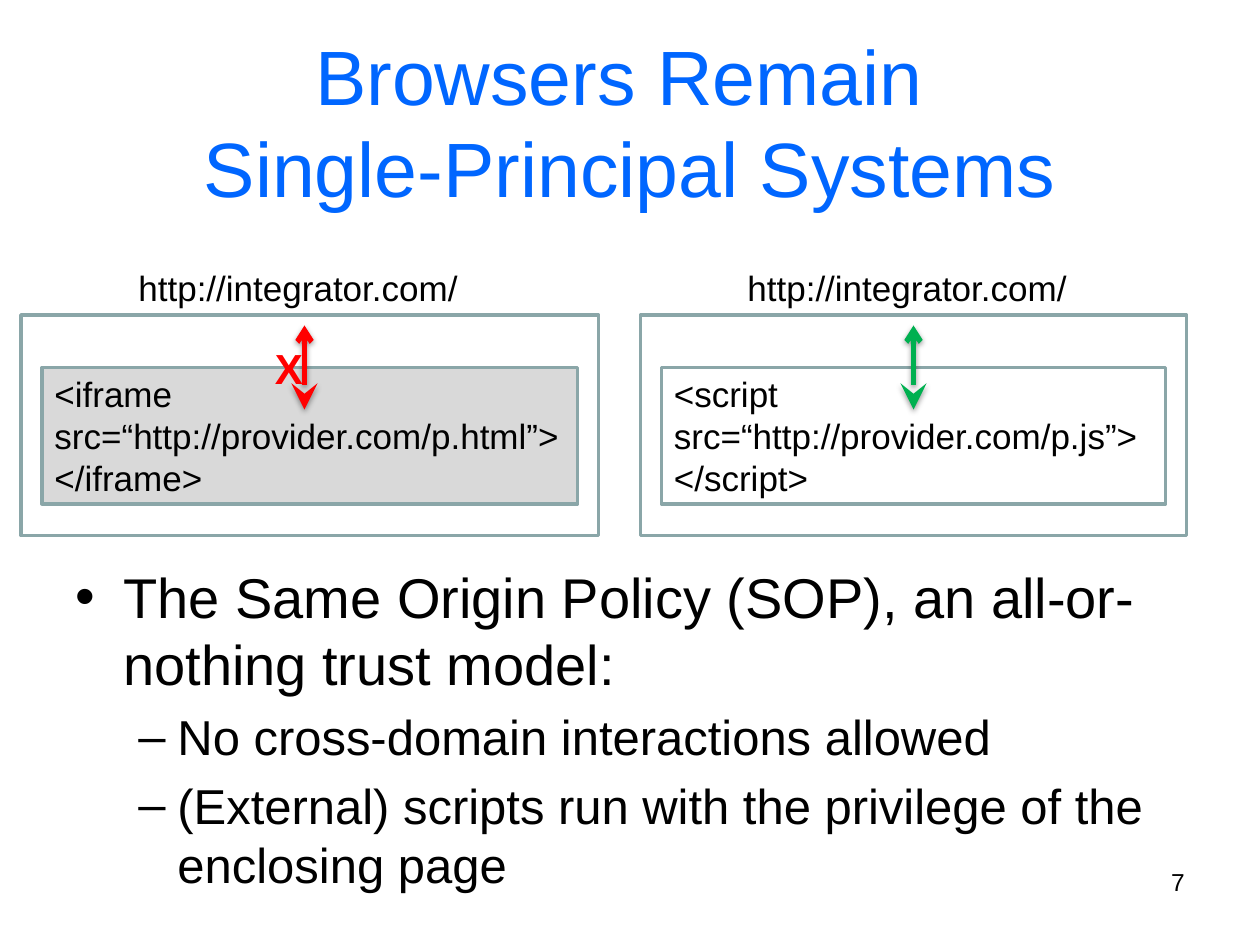
from dataclasses import dataclass

from lxml.etree import SubElement
from pptx import Presentation
from pptx.dml.color import RGBColor
from pptx.enum.shapes import MSO_CONNECTOR, MSO_SHAPE
from pptx.enum.text import MSO_ANCHOR, MSO_AUTO_SIZE, PP_ALIGN
from pptx.oxml.ns import qn
from pptx.util import Inches, Pt


@dataclass(frozen=True)
class Theme:
    font: str = "Arial"
    title_color: str = "0066FF"
    ink: str = "000000"
    frame: str = "8AA6A8"
    grey: str = "D9D9D9"
    white: str = "FFFFFF"
    denied: str = "FF0000"
    allowed: str = "00B050"
    title_size: int = 44
    bullet_size: int = 32
    dash_size: int = 28
    mark_size: int = 24
    code_size: int = 20
    number_size: int = 14
    frame_width: int = 2
    arrow_width: int = 3


def write(frame, text, *, font, size, color, bold=False, align=PP_ALIGN.LEFT):
    """Fill a text frame, one paragraph for each line of text."""
    frame.text = text
    for para in frame.paragraphs:
        para.alignment = align
        style_font(para.font, font, size, color, bold)
        for span in para.runs:
            style_font(span.font, font, size, color, bold)


def style_font(target, name, size, color, bold):
    target.name, target.size, target.bold = name, Pt(size), bold
    target.color.rgb = RGBColor.from_string(color)


def add_bullet(para, mark, margin, hanging):
    properties = para._p.get_or_add_pPr()
    properties.set("marL", str(Inches(margin)))
    properties.set("indent", str(-Inches(hanging)))
    SubElement(properties, qn("a:buFont"), typeface="Arial")
    SubElement(properties, qn("a:buChar"), char=mark)


def add_soft_shadow(connector):
    effects = SubElement(connector._element.spPr, qn("a:effectLst"))
    shadow = SubElement(effects, qn("a:outerShdw"), blurRad=str(Pt(3.1)),
                        dist=str(Pt(1.6)), dir="5400000", rotWithShape="0")
    color = SubElement(shadow, qn("a:srgbClr"), val="000000")
    SubElement(color, qn("a:alpha"), val="38000")


class SlideBuilder:
    """Places elements on a grid of 120 columns by 90 rows."""

    def __init__(self, deck, theme):
        self.theme = theme
        self.column = deck.slide_width / 120
        self.row = deck.slide_height / 90
        self.page = deck.slides.add_slide(deck.slide_layouts[5])

    def place(self, left, top, width, height):
        return (round(left * self.column), round(top * self.row),
                round(width * self.column), round(height * self.row))

    def title(self, text, *area):
        box = self.page.shapes.title
        box.left, box.top, box.width, box.height = self.place(*area)
        box.text_frame.vertical_anchor = MSO_ANCHOR.MIDDLE
        write(box.text_frame, text, font=self.theme.font, size=self.theme.title_size,
              color=self.theme.title_color, align=PP_ALIGN.CENTER)

    def text(self, text, *area, wrap=True, color=None, **style):
        box = self.page.shapes.add_textbox(*self.place(*area))
        box.text_frame.word_wrap = wrap
        if not wrap:
            box.text_frame.auto_size = MSO_AUTO_SIZE.SHAPE_TO_FIT_TEXT
        write(box.text_frame, text, font=self.theme.font,
              color=color or self.theme.ink, **style)
        return box

    def bullets(self, head, points, *area):
        lines = "\n".join([head, *points])
        box = self.text(lines, *area, size=self.theme.dash_size)
        first, *rest = box.text_frame.paragraphs
        first.runs[0].font.size = first.font.size = Pt(self.theme.bullet_size)
        first.space_before = Pt(self.theme.bullet_size * 0.2)
        add_bullet(first, "•", 0.38, 0.38)
        for para in rest:
            para.level = 1
            para.space_before = Pt(self.theme.dash_size * 0.2)
            add_bullet(para, "–", 0.81, 0.31)

    def rectangle(self, *area, fill=None, text=None):
        box = self.page.shapes.add_shape(MSO_SHAPE.RECTANGLE, *self.place(*area))
        box.shadow.inherit = False
        box.line.color.rgb = RGBColor.from_string(self.theme.frame)
        box.line.width = Pt(self.theme.frame_width)
        if fill:
            box.fill.solid()
            box.fill.fore_color.rgb = RGBColor.from_string(fill)
        else:
            box.fill.background()
        if text:
            box.text_frame.vertical_anchor = MSO_ANCHOR.MIDDLE
            write(box.text_frame, text, font=self.theme.font,
                  size=self.theme.code_size, color=self.theme.ink)

    def upward_arrow(self, column, bottom, top, color):
        x, start, _, _ = self.place(column, bottom, 0, 0)
        end = round(top * self.row)
        arrow = self.page.shapes.add_connector(MSO_CONNECTOR.STRAIGHT, x, start, x, end)
        arrow.line.color.rgb = RGBColor.from_string(color)
        arrow.line.width = Pt(self.theme.arrow_width)
        line = arrow.line._get_or_add_ln()
        SubElement(line, qn("a:headEnd"), type="stealth", w="lg", len="lg")
        SubElement(line, qn("a:tailEnd"), type="arrow")
        add_soft_shadow(arrow)

    def browser_page(self, left, width, label_left, code, fill):
        """Draw a page frame with its address above and a code box inside."""
        self.rectangle(left, 30, width, 21)
        self.text("http://integrator.com/", label_left, 24.75, 33, 5.25,
                  wrap=False, size=self.theme.code_size)
        self.rectangle(left + 2, 35, width - 4, 13, fill=fill, text=code)


def main():
    deck = Presentation()
    deck.slide_width, deck.slide_height = Inches(10), Inches(7.5)
    theme = Theme()
    slide = SlideBuilder(deck, theme)

    slide.title("Browsers Remain \vSingle-Principal Systems", 6, 4, 108, 15)
    slide.bullets("The Same Origin Policy (SOP), an all-or-nothing trust model:",
                  ["No cross-domain interactions allowed",
                   "(External) scripts run with the privilege of the enclosing page"],
                  6, 53, 105, 21)
    slide.text("7", 86, 82, 28, 6.25, size=theme.number_size, align=PP_ALIGN.RIGHT)

    slide.browser_page(2, 55, 12, "<iframe\nsrc=“http://provider.com/p.html”>\n</iframe>",
                       theme.grey)
    slide.browser_page(61, 52, 70, "<script\nsrc=“http://provider.com/p.js”>\n</script>",
                       theme.white)
    slide.upward_arrow(29, 39, 31, theme.denied)
    slide.text("X", 25, 32, 5.2, 6, wrap=False, size=theme.mark_size,
               color=theme.denied, bold=True)
    slide.upward_arrow(87, 39, 31, theme.allowed)

    deck.save("out.pptx")


if __name__ == "__main__":
    main()
